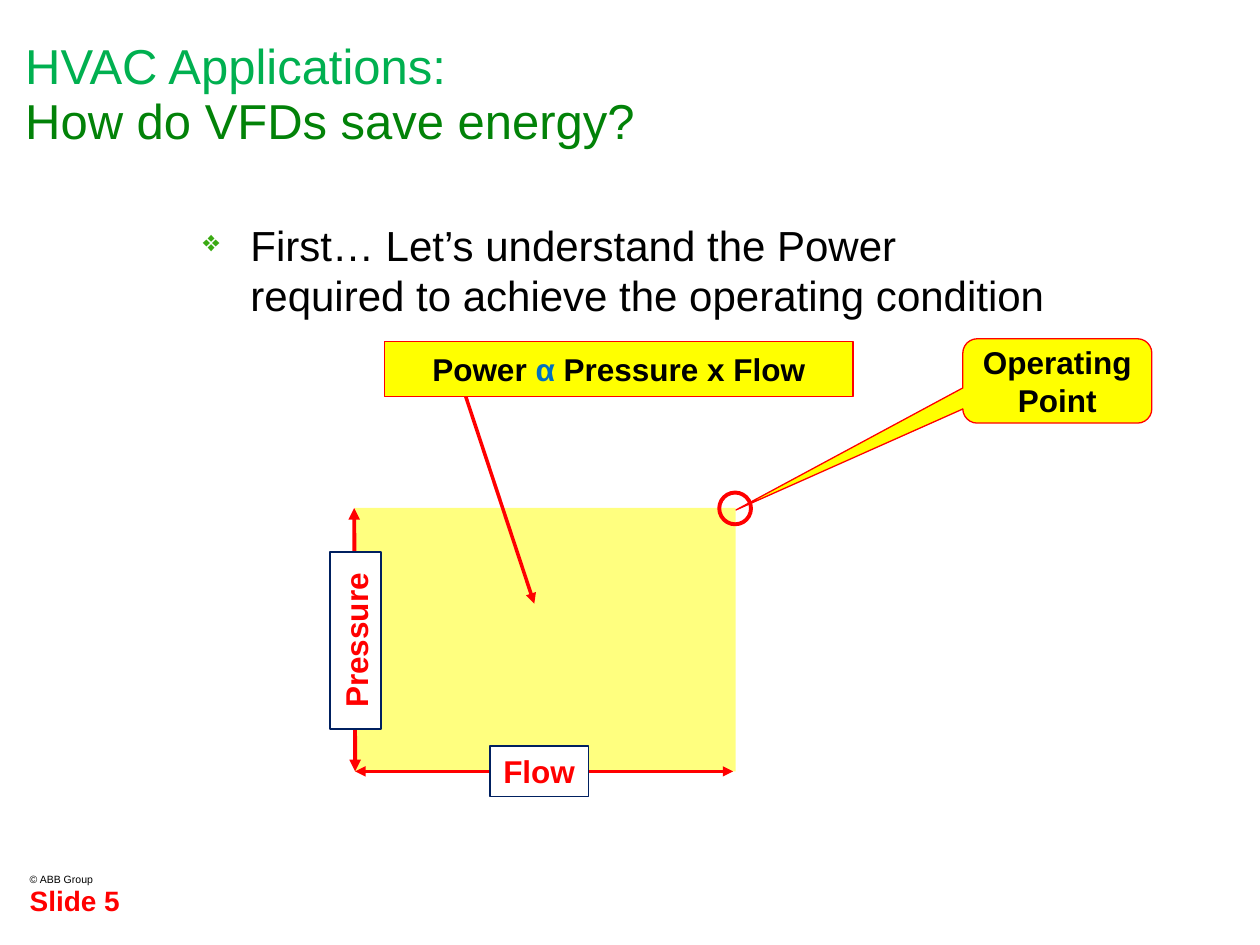
from lxml import etree
from pptx import Presentation
from pptx.dml.color import RGBColor
from pptx.enum.shapes import MSO_CONNECTOR, MSO_SHAPE
from pptx.enum.text import MSO_ANCHOR, PP_ALIGN
from pptx.oxml.ns import qn
from pptx.util import Cm, Pt

COLORS = {
    "title": "00B050",
    "subtitle": "028208",
    "bullet": "3AAA12",
    "black": "000000",
    "white": "FFFFFF",
    "red": "FF0000",
    "yellow": "FFFF00",
    "navy": "002060",
    "alpha": "0070C0",
}


def write_text(shape, runs, size, margins, anchor, align, bold):
    frame = shape.text_frame
    frame.word_wrap = True
    frame.vertical_anchor = anchor
    frame.margin_left, frame.margin_top, frame.margin_right, frame.margin_bottom = map(Cm, margins)
    paragraph = frame.paragraphs[0]
    paragraph.alignment = align
    for text, color in runs:
        run = paragraph.add_run()
        run.text = text
        run.font.name = "Arial"
        run.font.size = Pt(size)
        run.font.bold = bold
        run.font.color.rgb = RGBColor.from_string(COLORS[color])
    return paragraph


def add_arrow(start, end, width, ends):
    connector = slide.shapes.add_connector(MSO_CONNECTOR.STRAIGHT, *map(Cm, start + end))
    connector.line.color.rgb = RGBColor.from_string(COLORS["red"])
    connector.line.width = Pt(width)
    for end_name in ends:
        etree.SubElement(connector.line._get_or_add_ln(), qn(f"a:{end_name}"), type="triangle")
    etree.SubElement(connector._element.spPr, qn("a:effectLst"))


presentation = Presentation()
presentation.slide_width = Cm(25.4)
presentation.slide_height = Cm(19.05)
slide = presentation.slides.add_slide(presentation.slide_layouts[6])

text_boxes = [
    ("© ABB Group", "black", 6, (0.6, 17.22, 6.6, 0.64), (0, 0, 0, 0), MSO_ANCHOR.BOTTOM, False),
    ("HVAC Applications:", "title", 28, (0, 0, 25.4, 3.12), (0.51, 0.86, 0.61, 0), MSO_ANCHOR.TOP, False),
    ("First… Let’s understand the Power required to achieve the operating condition",
     "black", 24, (4.09, 4.42, 17.2, 12.8), (0, 0, 0, 0), MSO_ANCHOR.TOP, False),
    ("How do VFDs save energy?", "subtitle", 28, (0, 1.83, 25.4, 1.3), (0.51, 0, 0.61, 0), MSO_ANCHOR.TOP, False),
    ("Slide 5", "red", 16, (0.6, 17.22, 6.6, 1.83), (0, 0, 0, 0.56), MSO_ANCHOR.BOTTOM, True),
]
paragraphs = []
for text, color, size, place, margins, anchor, bold in text_boxes:
    box = slide.shapes.add_textbox(*map(Cm, place))
    paragraphs.append(write_text(box, [(text, color)], size, margins, anchor, PP_ALIGN.LEFT, bold))

paragraphs[1].line_spacing = 0.9
bullet_properties = paragraphs[2]._p.get_or_add_pPr()
bullet_properties.set("marL", str(Cm(0.96)))
bullet_properties.set("indent", str(-Cm(0.96)))
bullet_color = etree.SubElement(bullet_properties, qn("a:buClr"))
etree.SubElement(bullet_color, qn("a:srgbClr"), val=COLORS["bullet"])
etree.SubElement(bullet_properties, qn("a:buSzPct"), val="70000")
etree.SubElement(bullet_properties, qn("a:buChar"), char="❖")

power_area = slide.shapes.add_shape(MSO_SHAPE.RECTANGLE, Cm(7.16), Cm(10.24), Cm(7.67), Cm(5.31))
power_area.shadow.inherit = False
power_area.fill.solid()
power_area.fill.fore_color.rgb = RGBColor.from_string(COLORS["yellow"])
area_color = power_area._element.spPr.find(qn("a:solidFill")).find(qn("a:srgbClr"))
etree.SubElement(area_color, qn("a:alpha"), val="50000")
power_area.line.fill.background()

add_arrow((7.16, 15.55), (14.78, 15.55), 1.75, ["headEnd", "tailEnd"])
add_arrow((7.14, 10.24), (7.16, 15.55), 2.25, ["headEnd", "tailEnd"])
add_arrow((9.09, 7.09), (10.77, 12.17), 2, ["tailEnd"])

operating_circle = slide.shapes.add_shape(MSO_SHAPE.OVAL, Cm(14.5), Cm(9.93), Cm(0.64), Cm(0.64))
operating_circle.shadow.inherit = False
operating_circle.fill.background()
operating_circle.line.color.rgb = RGBColor.from_string(COLORS["red"])
operating_circle.line.width = Pt(2.25)

power_runs = [("Power ", "black"), ("α", "alpha"), (" Pressure x Flow", "black")]
labels = [
    (MSO_SHAPE.RECTANGLE, [("Flow", "red")], (9.88, 15.04, 1.98, 1.02), "white", "navy", 0.75, 0),
    (MSO_SHAPE.RECTANGLE, [("Pressure", "red")], (5.38, 12.4, 3.58, 1.02), "white", "navy", 1, 270),
    (MSO_SHAPE.RECTANGLE, power_runs, (7.75, 6.88, 9.45, 1.12), "yellow", "red", 0.75, 0),
    (MSO_SHAPE.ROUNDED_RECTANGULAR_CALLOUT, [("Operating Point", "black")],
     (19.41, 6.83, 3.81, 1.7), "yellow", "red", 0.75, 0),
]
for kind, runs, place, fill, outline, width, rotation in labels:
    label = slide.shapes.add_shape(kind, *map(Cm, place))
    label.shadow.inherit = False
    label.rotation = rotation
    label.fill.solid()
    label.fill.fore_color.rgb = RGBColor.from_string(COLORS[fill])
    label.line.color.rgb = RGBColor.from_string(COLORS[outline])
    label.line.width = Pt(width)
    if kind == MSO_SHAPE.ROUNDED_RECTANGULAR_CALLOUT:
        label.adjustments[0] = -1.7
        label.adjustments[1] = 1.53
        label.adjustments[2] = 0.17
    write_text(label, runs, 18, (0.25, 0.13, 0.25, 0.13), MSO_ANCHOR.MIDDLE, PP_ALIGN.CENTER, True)

presentation.save("out.pptx")
